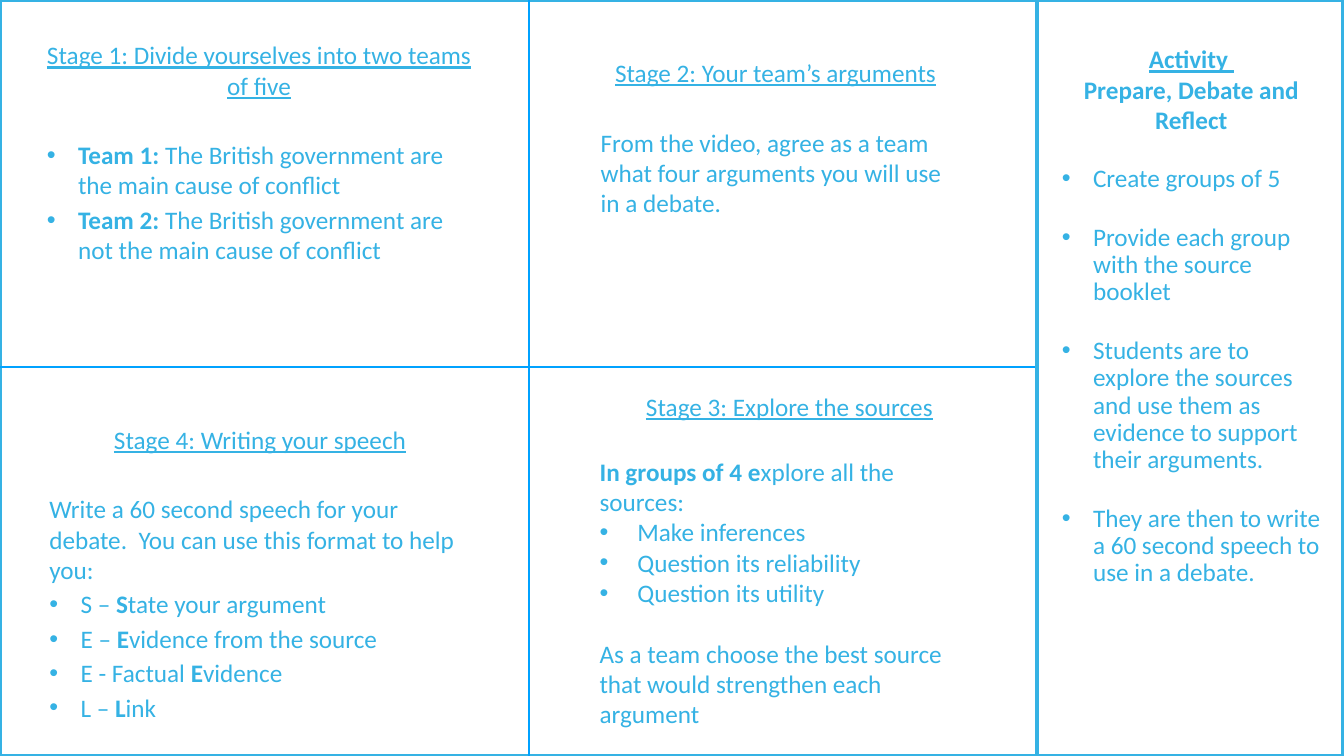
import lxml.etree
import pptx
import pptx.dml.color
import pptx.enum.shapes
import pptx.enum.text
import pptx.oxml.ns
import pptx.util
from pptx.util import Inches

SKY = pptx.dml.color.RGBColor(0x35, 0xB2, 0xE4)
AZURE = pptx.dml.color.RGBColor(0x00, 0xA2, 0xFF)
WHITE = pptx.dml.color.RGBColor(0xFF, 0xFF, 0xFF)
PANEL_SPLIT = 20.58
LINE_GAP = 44


def add_paragraph(frame, text, before=0, indent=0, centered=False,
                  bold=None, underline=None, spacing=None):
    """Text between asterisks is set in bold."""
    first = not frame.paragraphs[0].runs
    paragraph = frame.paragraphs[0] if first else frame.add_paragraph()
    align = pptx.enum.text.PP_ALIGN
    paragraph.alignment = align.CENTER if centered else align.LEFT
    paragraph.space_before = pptx.util.Pt(0 if first else before)
    if spacing:
        paragraph.line_spacing = spacing

    properties = paragraph._p.get_or_add_pPr()
    properties.set("marL", str(Inches(indent)))
    properties.set("indent", str(Inches(-indent)))
    qn = pptx.oxml.ns.qn
    if indent:
        lxml.etree.SubElement(properties, qn("a:buFont"), typeface="Arial")
        lxml.etree.SubElement(properties, qn("a:buChar"), char="•")
    else:
        lxml.etree.SubElement(properties, qn("a:buNone"))

    font = paragraph.font
    font.name = "Calibri"
    font.size = pptx.util.Pt(36)
    font.color.rgb = SKY
    font.bold = bold
    font.underline = underline

    for position, part in enumerate(text.split("*")):
        if part:
            run = paragraph.add_run()
            run.text = part
            if position % 2:
                run.font.bold = True


def add_panel(slide, left, width):
    panel = slide.shapes.add_shape(
        pptx.enum.shapes.MSO_SHAPE.RECTANGLE,
        Inches(left), Inches(0), Inches(width), Inches(15))
    panel.shadow.inherit = False
    panel.fill.solid()
    panel.fill.fore_color.rgb = WHITE
    panel.line.color.rgb = SKY
    panel.line.width = pptx.util.Pt(6)


def add_divider(slide, x1, y1, x2, y2):
    divider = slide.shapes.add_connector(
        pptx.enum.shapes.MSO_CONNECTOR.STRAIGHT,
        Inches(x1), Inches(y1), Inches(x2), Inches(y2))
    divider.line.color.rgb = AZURE
    divider.line.width = pptx.util.Pt(3)
    lxml.etree.SubElement(divider._element.spPr, pptx.oxml.ns.qn("a:effectLst"))


def add_stage(slide, left, top, width, height, heading, paragraphs):
    stage = slide.shapes.add_textbox(
        Inches(left), Inches(top), Inches(width), Inches(height))
    frame = stage.text_frame
    frame.word_wrap = True
    frame.auto_size = pptx.enum.text.MSO_AUTO_SIZE.SHAPE_TO_FIT_TEXT
    add_paragraph(frame, heading, centered=True, underline=True)
    for text, before, indent in paragraphs:
        add_paragraph(frame, text, before, indent)


def fill_activity(activity, left, top, width, height):
    activity.left, activity.top = Inches(left), Inches(top)
    activity.width, activity.height = Inches(width), Inches(height)
    activity._element.getparent().append(activity._element)
    frame = activity.text_frame
    frame.word_wrap = True
    frame.auto_size = pptx.enum.text.MSO_AUTO_SIZE.SHAPE_TO_FIT_TEXT
    frame.vertical_anchor = pptx.enum.text.MSO_ANCHOR.MIDDLE
    frame.margin_left = frame.margin_right = Inches(0.06)
    frame.margin_top = frame.margin_bottom = Inches(0.06)
    add_paragraph(frame, "Activity ", centered=True, bold=True, underline=True)
    add_paragraph(frame, "Prepare, Debate and Reflect", centered=True, bold=True)
    for step in (
        "Create groups of 5",
        "Provide each group with the source booklet",
        "Students are to explore the sources and use them as evidence "
        "to support their arguments.",
        "They are then to write a 60 second speech to use in a debate.",
    ):
        add_paragraph(frame, step, before=45, indent=0.62, spacing=0.9)


def main():
    presentation = pptx.Presentation()
    presentation.slide_width = Inches(26.67)
    presentation.slide_height = Inches(15)
    slide = presentation.slides.add_slide(presentation.slide_layouts[1])
    title = slide.shapes.title._element
    title.getparent().remove(title)

    add_panel(slide, PANEL_SPLIT, 6.08)
    add_panel(slide, 0, PANEL_SPLIT)
    add_divider(slide, 10.5, 0, 10.5, 15)
    add_divider(slide, 0, 7.29, 20.53, 7.29)

    after_heading = LINE_GAP + 12
    add_stage(slide, 0.83, 0.74, 8.62, 4.59,
              "Stage 1: Divide yourselves into two teams of five", [
        ("*Team 1: *The British government are the main cause of conflict",
         after_heading, 0.62),
        ("*Team 2: *The British government are not the main cause of conflict",
         6, 0.62),
    ])
    add_stage(slide, 11.82, 1.09, 7.14, 3.3, "Stage 2: Your team’s arguments", [
        ("From the video, agree as a team what four arguments you will use "
         "in a debate.", after_heading, 0),
    ])
    add_stage(slide, 11.8, 7.71, 7.73, 6.85, "Stage 3: Explore the sources", [
        ("*In groups of 4 e*xplore all the sources:", LINE_GAP + 6, 0),
        ("Make inferences", 0, 0.75),
        ("Question its reliability", 0, 0.75),
        ("Question its utility", 0, 0.75),
        ("As a team choose the best source that would strengthen each argument",
         LINE_GAP, 0),
    ])
    add_stage(slide, 0.88, 8.37, 8.56, 6.06, "Stage 4: Writing your speech", [
        ("Write a 60 second speech for your debate.  You can use this format "
         "to help you:", after_heading, 0),
        ("S – *S*tate your argument", 6, 0.62),
        ("E – *E*vidence from the source", 6, 0.62),
        ("E - Factual *E*vidence", 6, 0.62),
        ("L – *L*ink", 6, 0.62),
    ])
    fill_activity(slide.placeholders[1], 21.01, 0.49, 5.26, 11.54)
    presentation.save("out.pptx")


if __name__ == "__main__":
    main()
